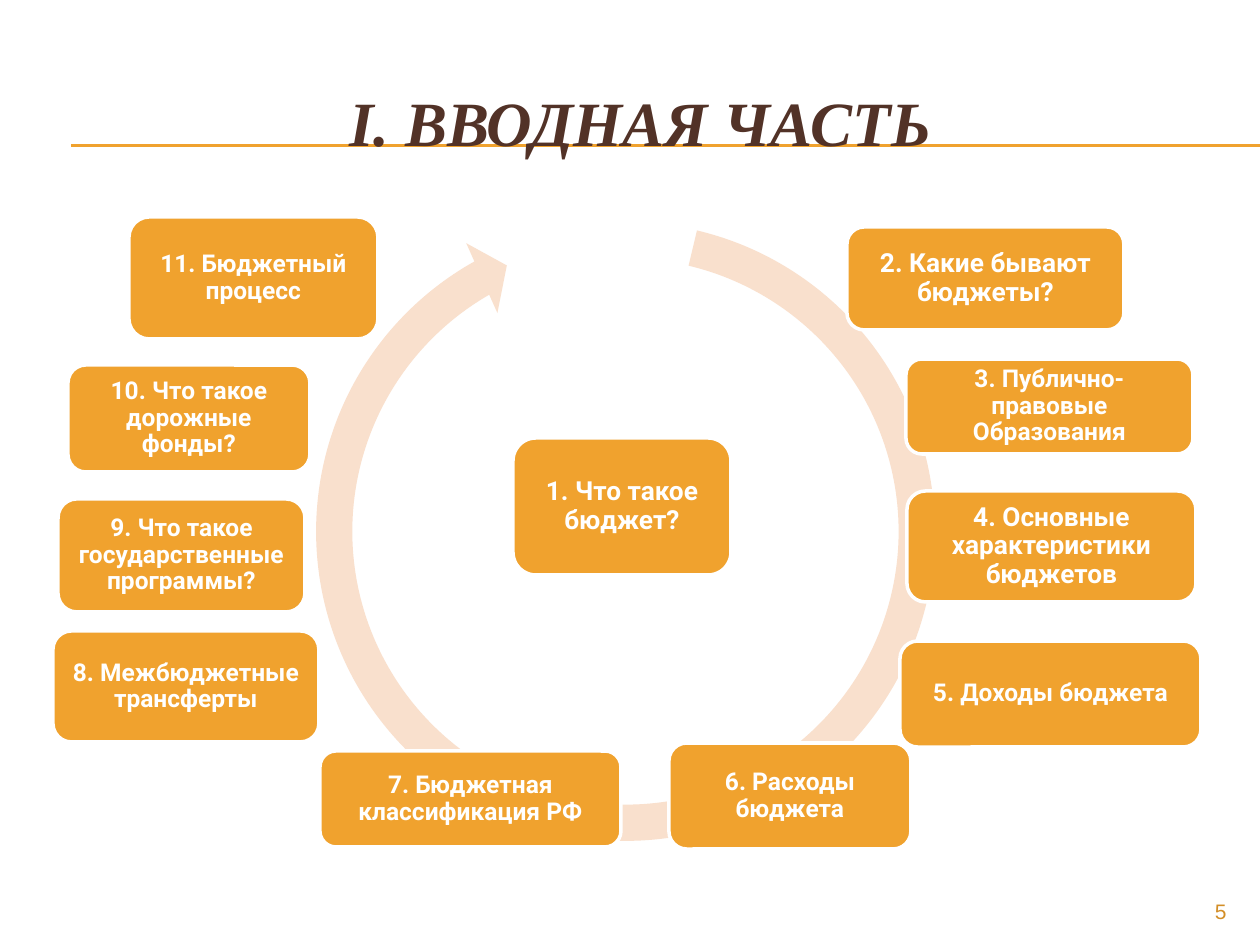
from lxml import etree
from pptx import Presentation
from pptx import util as u
from pptx.dml.color import RGBColor
from pptx.enum import shapes, text
from pptx.oxml.ns import qn

PX = u.Inches(1) / 126
COLORS = {"gold": "F0A22E", "peach": "F9E0CD", "brown": "523227",
          "ochre": "D38E27", "white": "FFFFFF"}
TITLE_ONLY = 5

# heading, left, top, width, height, text size
TOPICS = [
    ("1. Что такое бюджет?", 513, 438, 218, 137, 15),
    ("2. Какие бывают бюджеты?", 847, 227, 277, 103, 15),
    ("3. Публично-правовые Образования", 906, 359, 287, 95, 14),
    ("4. Основные характеристики бюджетов", 907, 491, 289, 111, 15),
    ("5. Доходы бюджета", 900, 641, 301, 106, 14),
    ("6. Расходы бюджета", 669, 743, 242, 106, 14),
    ("7. Бюджетная классификация РФ", 320, 751, 301, 96, 14),
    ("8. Межбюджетные трансферты", 53, 631, 266, 111, 14),
    ("9. Что такое государственные программы?", 58, 499, 247, 113, 14),
    ("10. Что такое дорожные фонды?", 68, 365, 242, 107, 14),
    ("11. Бюджетный процесс", 129, 217, 249, 122, 14),
]


def px(*lengths):
    return [round(length * PX) for length in lengths]


def rgb(name):
    return RGBColor.from_string(COLORS[name])


class Deck:
    def __init__(self, width, height):
        self.prs = Presentation()
        self.prs.slide_width, self.prs.slide_height = px(width, height)
        self.slide = self.prs.slides.add_slide(self.prs.slide_layouts[TITLE_ONLY])
        self.shapes = self.slide.shapes

    def put_text(self, frame, words, color, align, anchor, margin=None, spacing=None, **font):
        frame.word_wrap = True
        frame.auto_size = text.MSO_AUTO_SIZE.NONE
        frame.vertical_anchor = anchor
        if margin is not None:
            for side in ("left", "top", "right", "bottom"):
                setattr(frame, f"margin_{side}", u.Inches(margin))
        paragraph = frame.paragraphs[0]
        paragraph.alignment = align
        paragraph.line_spacing = spacing
        run = paragraph.add_run()
        run.text = words
        for key, value in font.items():
            setattr(run.font, key, value)
        run.font.color.rgb = rgb(color)

    def title(self, words, *box):
        heading = self.shapes.title
        for side, value in zip(("left", "top", "width", "height"), px(*box)):
            setattr(heading, side, value)
        self.put_text(heading.text_frame, words, "brown", text.PP_ALIGN.CENTER,
                      text.MSO_ANCHOR.MIDDLE, name="Times New Roman",
                      size=u.Pt(36), bold=True, italic=True)
        # Bring the heading in front of the rules
        self.shapes._spTree.append(heading._element)

    def rule(self, left, right, y):
        line = self.shapes.add_connector(
            shapes.MSO_CONNECTOR.STRAIGHT, *px(left, y, right, y))
        line.line.color.rgb = rgb("gold")
        line.line.width = u.Pt(0.75)
        etree.SubElement(line._element.spPr, qn("a:effectLst"))

    def shape(self, kind, color, *box):
        figure = self.shapes.add_shape(kind, *px(*box))
        figure.shadow.inherit = False
        figure.fill.solid()
        figure.fill.fore_color.rgb = rgb(color)
        return figure

    def cycle_arrow(self, *box):
        arrow = self.shape(shapes.MSO_SHAPE.CIRCULAR_ARROW, "peach", *box)
        arrow.line.fill.background()
        for index, value in enumerate((0.055, 3.307, 144.267, 170.014, 0.058)):
            arrow.adjustments[index] = value

    def topic(self, words, left, top, width, height, size):
        card = self.shape(shapes.MSO_SHAPE.ROUNDED_RECTANGLE, "gold",
                          left, top, width, height)
        card.line.color.rgb = rgb("white")
        card.line.width = u.Pt(2)
        self.put_text(card.text_frame, words, "white", text.PP_ALIGN.CENTER,
                      text.MSO_ANCHOR.MIDDLE, margin=0.06, spacing=0.9,
                      name="Roboto", size=u.Pt(size), bold=True)

    def page_number(self, number, *box):
        label = self.shapes.add_textbox(*px(*box))
        self.put_text(label.text_frame, number, "ochre", text.PP_ALIGN.RIGHT,
                      text.MSO_ANCHOR.TOP, name="Arial", size=u.Pt(12))


def main():
    deck = Deck(1260, 945)
    for y in (145, 146):
        deck.rule(71, 1260, y)
    deck.title("I. ВВОДНАЯ ЧАСТЬ", 42, 63, 1197, 116)
    deck.cycle_arrow(296, 202, 659, 659)
    for topic in TOPICS:
        deck.topic(*topic)
    deck.page_number("5", 1134, 892, 105, 34)
    deck.prs.save("out.pptx")


if __name__ == "__main__":
    main()
